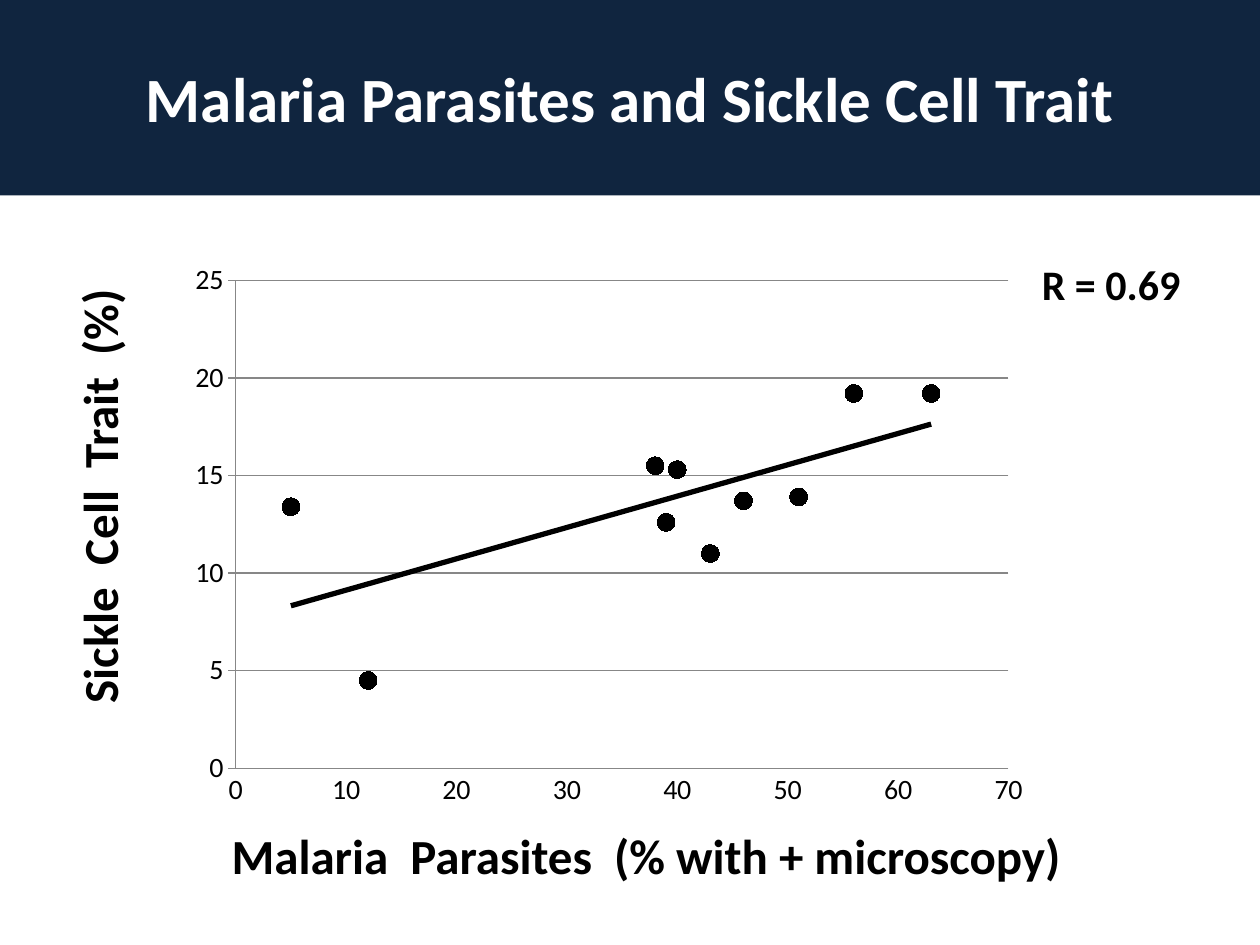
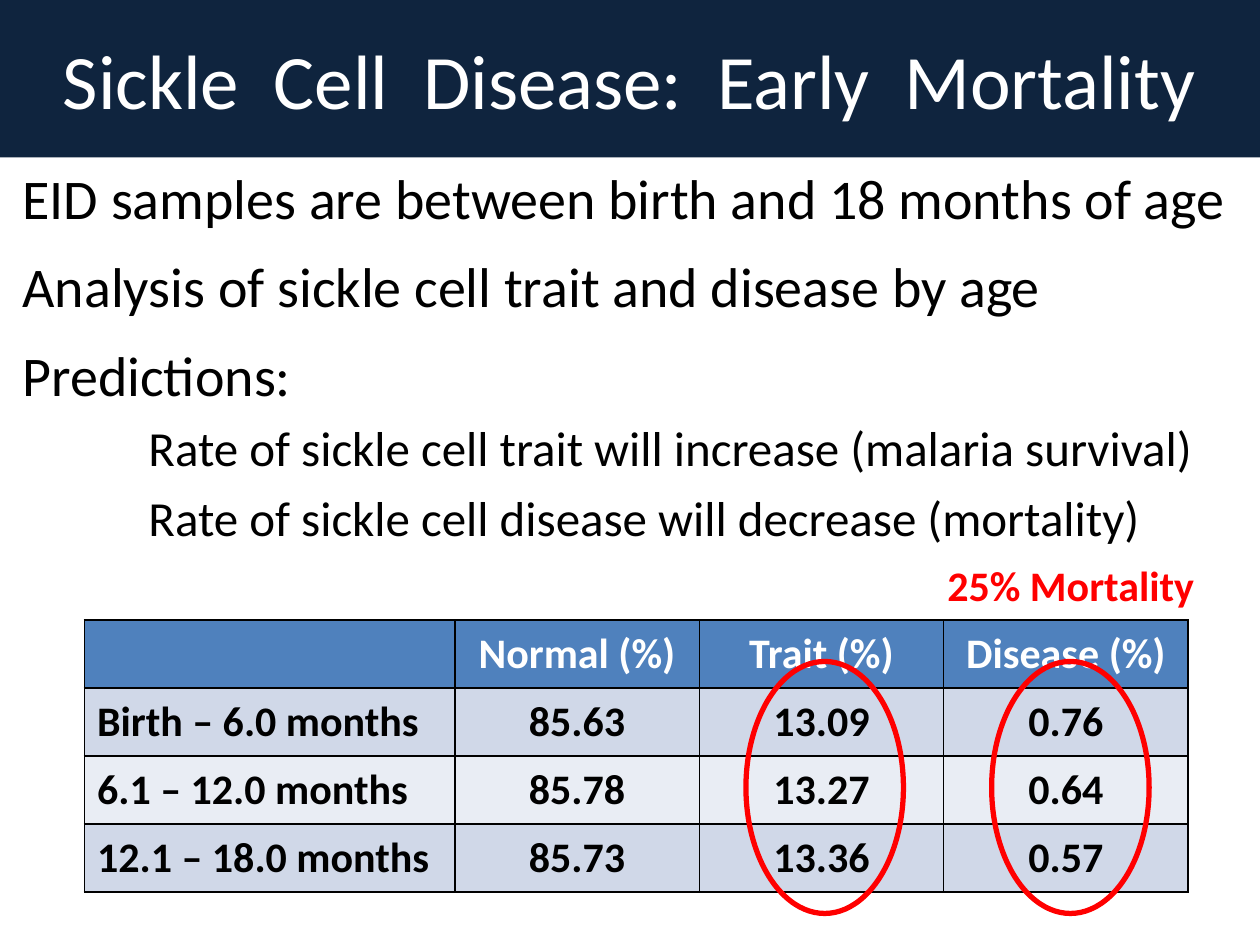
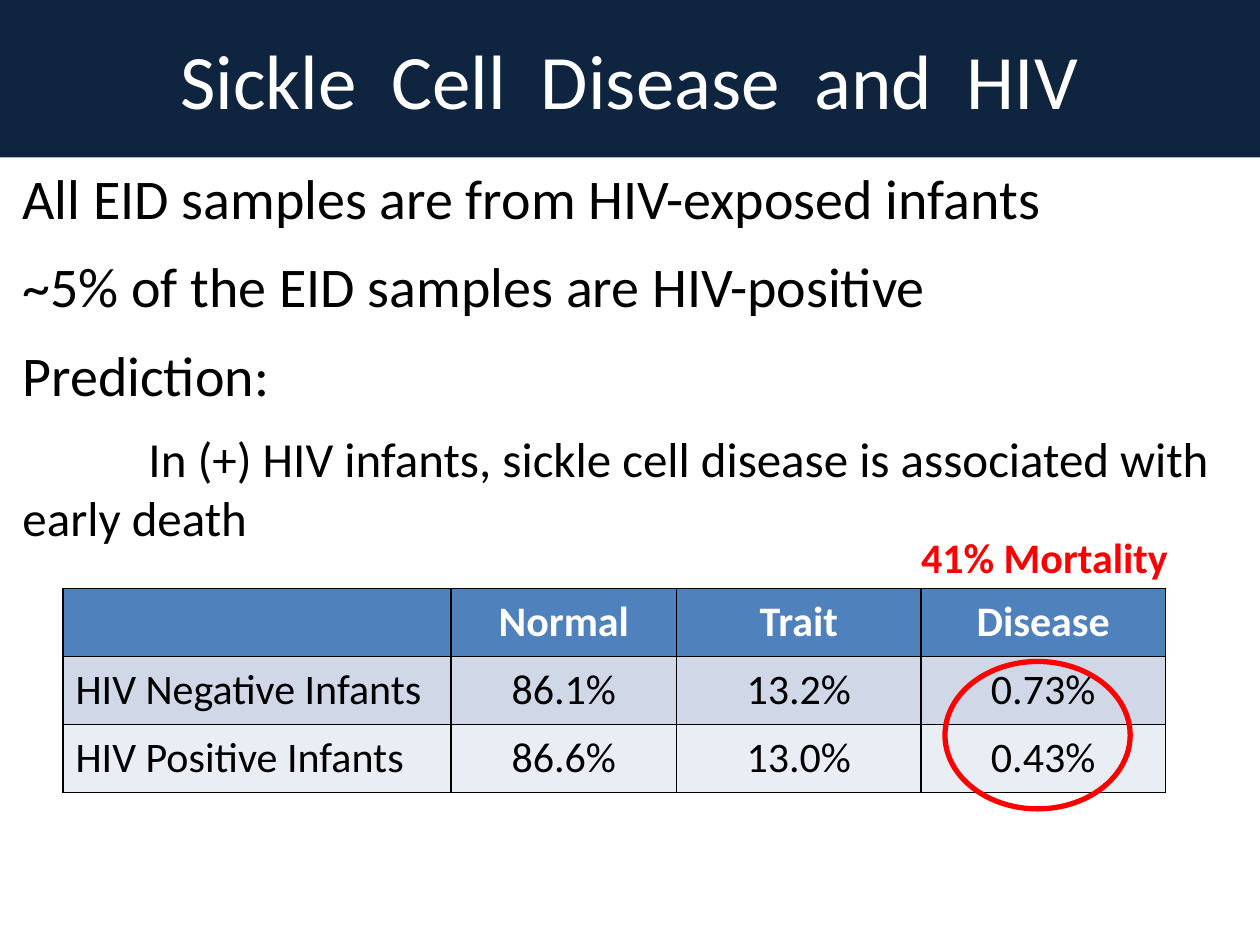
"""Builds three slides on sickle cell trait, malaria and HIV."""
import lxml.etree
import pptx
import pptx.chart.data
import pptx.dml.color
import pptx.enum.chart
import pptx.enum.shapes
import pptx.enum.text
import pptx.oxml
import pptx.oxml.ns
import pptx.util

Inches = pptx.util.Inches
Pt = pptx.util.Pt
qn = pptx.oxml.ns.qn
CENTER = pptx.enum.text.PP_ALIGN.CENTER
LEFT = pptx.enum.text.PP_ALIGN.LEFT
MIDDLE = pptx.enum.text.MSO_ANCHOR.MIDDLE
FONT = "Calibri"
COLORS = {
    "chart band": "10253F",
    "band": "0F243E",
    "white": "FFFFFF",
    "black": "000000",
    "grid": "878787",
    "header": "4F81BD",
    "odd row": "D0D8E8",
    "even row": "E9EDF4",
    "highlight": "FF0000",
}
BODY_BOX = (0.08, 1.25, 9.92, 3.33)
ROW_HEIGHT = 0.54
PARASITES = [46, 63, 40, 43, 12, 51, 39, 56, 38, 5]
TRAIT = [13.7, 19.2, 15.3, 11, 4.5, 13.9, 12.6, 19.2, 15.5, 13.4]


def rgb(name):
    """Return the named colour."""
    return pptx.dml.color.RGBColor.from_string(COLORS[name])


def place(box):
    """Turn a box in inches into lengths."""
    return [Inches(length) for length in box]


def style(paragraph, size, color="black", bold=False, align=LEFT):
    """Format a paragraph and its runs."""
    paragraph.alignment = align
    for run in paragraph.runs:
        run.font.name = FONT
        run.font.size = Pt(size)
        run.font.bold = bold
        run.font.color.rgb = rgb(color)


def add_title(slide, text, height=1.25, size=44, bold=False, color="band"):
    """Add the dark title band across the top."""
    band = slide.shapes.add_shape(
        pptx.enum.shapes.MSO_SHAPE.RECTANGLE, *place((0, 0, 10, height)))
    band.shadow.inherit = False
    band.fill.solid()
    band.fill.fore_color.rgb = rgb(color)
    band.line.fill.background()
    frame = band.text_frame
    frame.word_wrap = True
    frame.vertical_anchor = MIDDLE
    frame.text = text
    style(frame.paragraphs[0], size, "white", bold, CENTER)


def add_label(slide, box, text, size, color="black", align=LEFT, wrap=False):
    """Add a bold one-line label and return its text frame."""
    frame = slide.shapes.add_textbox(*place(box)).text_frame
    frame.word_wrap = wrap
    frame.text = text
    style(frame.paragraphs[0], size, color, True, align)
    return frame


def add_points(slide, box, points, details, detail_space):
    """Add the main points, then details with an indented first line."""
    frame = slide.shapes.add_textbox(*place(box)).text_frame
    frame.word_wrap = True
    for index, text in enumerate(points + details):
        paragraph = frame.add_paragraph() if index else frame.paragraphs[0]
        paragraph.text = text
        paragraph.space_after = Pt(6)
        is_detail = index >= len(points)
        paragraph.space_before = Pt(detail_space if is_detail else 6)
        style(paragraph, 28 if is_detail else 32)
        if is_detail:
            properties = paragraph._p.get_or_add_pPr()
            properties.set("marL", "0")
            properties.set("indent", str(Inches(1)))


def add_borders(cell):
    """Draw thin black borders around a cell."""
    properties = cell._tc.get_or_add_tcPr()
    for side in ("lnL", "lnR", "lnT", "lnB"):
        border = lxml.etree.SubElement(properties, qn("a:" + side), w=str(Pt(1)))
        fill = lxml.etree.SubElement(border, qn("a:solidFill"))
        lxml.etree.SubElement(fill, qn("a:srgbClr"), val=COLORS["black"])


def add_rates(slide, left, top, widths, rows, bold):
    """Add a table of rates with a header and banded rows."""
    box = (left, top, sum(widths), ROW_HEIGHT * len(rows))
    rates = slide.shapes.add_table(len(rows), len(widths), *place(box)).table
    for column, width in zip(rates.columns, widths):
        column.width = Inches(width)
    for r, row in enumerate(rows):
        rates.rows[r].height = Inches(ROW_HEIGHT)
        band = "header" if r == 0 else "odd row" if r % 2 else "even row"
        for c, text in enumerate(row):
            cell = rates.cell(r, c)
            add_borders(cell)
            cell.fill.solid()
            cell.fill.fore_color.rgb = rgb(band)
            cell.vertical_anchor = MIDDLE
            cell.text = text
            style(cell.text_frame.paragraphs[0], 24, "black" if r else "white",
                  bold or r == 0, CENTER if c else LEFT)


def add_ring(slide, box):
    """Circle some table values in red."""
    ring = slide.shapes.add_shape(pptx.enum.shapes.MSO_SHAPE.OVAL, *place(box))
    ring.shadow.inherit = False
    ring.fill.background()
    ring.line.color.rgb = rgb("highlight")
    ring.line.width = Pt(3)


def style_axis(axis, maximum, step, tick):
    """Set an axis's scale, ticks, line and font."""
    axis.minimum_scale, axis.maximum_scale, axis.major_unit = 0, maximum, step
    axis.major_tick_mark = tick
    axis.has_major_gridlines = False
    axis.has_title = False
    axis.format.line.color.rgb = rgb("grid")
    axis.tick_labels.number_format = "General"
    axis.tick_labels.number_format_is_linked = False
    axis.tick_labels.font.size = Pt(16)


def add_trend_line(series):
    """Add a linear trend line to a scatter series."""
    trend = pptx.oxml.parse_xml(
        '<c:trendline xmlns:c="http://schemas.openxmlformats.org/drawingml/2006/chart"'
        ' xmlns:a="http://schemas.openxmlformats.org/drawingml/2006/main">'
        f'<c:spPr><a:ln w="{Pt(3)}"><a:solidFill><a:srgbClr val="{COLORS["black"]}"/>'
        '</a:solidFill></a:ln></c:spPr><c:trendlineType val="linear"/>'
        '<c:dispRSqr val="0"/><c:dispEq val="0"/></c:trendline>')
    series._element.find(qn("c:xVal")).addprevious(trend)


def fix_plot_area(chart, **fractions):
    """Fix the inner plot area as fractions of the chart."""
    plot_area = chart._chartSpace.chart.plotArea
    for old in plot_area.findall(qn("c:layout")):
        plot_area.remove(old)
    layout = lxml.etree.Element(qn("c:layout"))
    manual = lxml.etree.SubElement(layout, qn("c:manualLayout"))
    settings = {"layoutTarget": "inner", "xMode": "edge", "yMode": "edge", **fractions}
    for name, value in settings.items():
        lxml.etree.SubElement(manual, qn("c:" + name), val=str(value))
    plot_area.insert(0, layout)


def add_scatter(slide, box):
    """Plot sickle cell trait against malaria parasites."""
    data = pptx.chart.data.XyChartData()
    regions = data.add_series("Series 1")
    for parasites, trait in zip(PARASITES, TRAIT):
        regions.add_data_point(parasites, trait)
    chart = slide.shapes.add_chart(
        pptx.enum.chart.XL_CHART_TYPE.XY_SCATTER, *place(box), data).chart
    chart.has_legend = False
    chart.has_title = False
    chart.font.name = FONT
    chart.font.size = Pt(10)
    chart.font.color.rgb = rgb("black")
    ticks = pptx.enum.chart.XL_TICK_MARK
    style_axis(chart.category_axis, 70, 10, ticks.NONE)
    style_axis(chart.value_axis, 25, 5, ticks.CROSS)
    chart.value_axis.has_major_gridlines = True
    chart.value_axis.major_gridlines.format.line.color.rgb = rgb("grid")
    chart.plots[0].vary_by_categories = False
    series = chart.plots[0].series[0]
    series.smooth = False
    series.format.line.fill.background()
    series.marker.style = pptx.enum.chart.XL_MARKER_STYLE.CIRCLE
    series.marker.size = 10
    series.marker.format.fill.solid()
    series.marker.format.fill.fore_color.rgb = rgb("black")
    series.marker.format.line.color.rgb = rgb("black")
    add_trend_line(series)
    fix_plot_area(chart, x=0.066, y=0.05, w=0.898, h=0.861)


def build_malaria(slide):
    """Build the slide relating malaria to sickle cell trait."""
    add_title(slide, "Malaria Parasites and Sickle Cell Trait", 1.55, 36, True,
              "chart band")
    add_label(slide, (1.74, 6.5, 7.17, 0.57),
              "Malaria  Parasites  (% with + microscopy)", 28, wrap=True)
    trait = add_label(slide, (0.5, 2.25, 0.67, 3.43), "Sickle  Cell  Trait  (%)", 28)
    trait._txBody.bodyPr.set("vert", "vert270")
    add_label(slide, (8.17, 2, 1.31, 0.5), "R = 0.69", 24)
    add_scatter(slide, (1.42, 2, 6.83, 4.5))


def build_mortality(slide):
    """Build the slide on mortality by age."""
    add_title(slide, "Sickle  Cell  Disease:  Early  Mortality")
    add_points(slide, BODY_BOX, [
        "EID samples are between birth and 18 months of age",
        "Analysis of sickle cell trait and disease by age",
        "Predictions:",
    ], [
        "Rate of sickle cell trait will increase (malaria survival)",
        "Rate of sickle cell disease will decrease (mortality)",
    ], 0)
    add_rates(slide, 0.67, 4.92, [2.94, 1.94, 1.94, 1.94], [
        ["", "Normal (%)", "Trait (%)", "Disease (%)"],
        ["Birth – 6.0 months", "85.63", "13.09", "0.76"],
        ["6.1 – 12.0 months", "85.78", "13.27", "0.64"],
        ["12.1 – 18.0 months", "85.73", "13.36", "0.57"],
    ], True)
    for left in (5.92, 7.87):
        add_ring(slide, (left, 5.25, 1.25, 2))
    add_label(slide, (7.42, 4.39, 2.18, 0.5), "25% Mortality", 24, "highlight")


def build_hiv(slide):
    """Build the slide on sickle cell disease and HIV."""
    add_title(slide, "Sickle  Cell  Disease  and  HIV")
    add_points(slide, BODY_BOX, [
        "All EID samples are from HIV-exposed infants",
        "~5% of the EID samples are HIV-positive",
        "Prediction:",
    ], [
        "In (+) HIV infants, sickle cell disease is associated with early death",
    ], 6)
    add_rates(slide, 0.5, 4.67, [3.08, 1.79, 1.94, 1.94], [
        ["", "Normal", "Trait", "Disease"],
        ["HIV Negative Infants", "86.1%", "13.2%", "0.73%"],
        ["HIV Positive Infants", "86.6%", "13.0%", "0.43%"],
    ], False)
    add_ring(slide, (7.5, 5.25, 1.47, 1.17))
    add_label(slide, (6.83, 4.17, 2.92, 0.5), "41% Mortality", 24, "highlight",
              CENTER, True)


def main():
    """Build and save the presentation."""
    deck = pptx.Presentation()
    deck.slide_width, deck.slide_height = Inches(10), Inches(7.5)
    for build in (build_malaria, build_mortality, build_hiv):
        build(deck.slides.add_slide(deck.slide_layouts[6]))
    deck.save("out.pptx")


if __name__ == "__main__":
    main()
